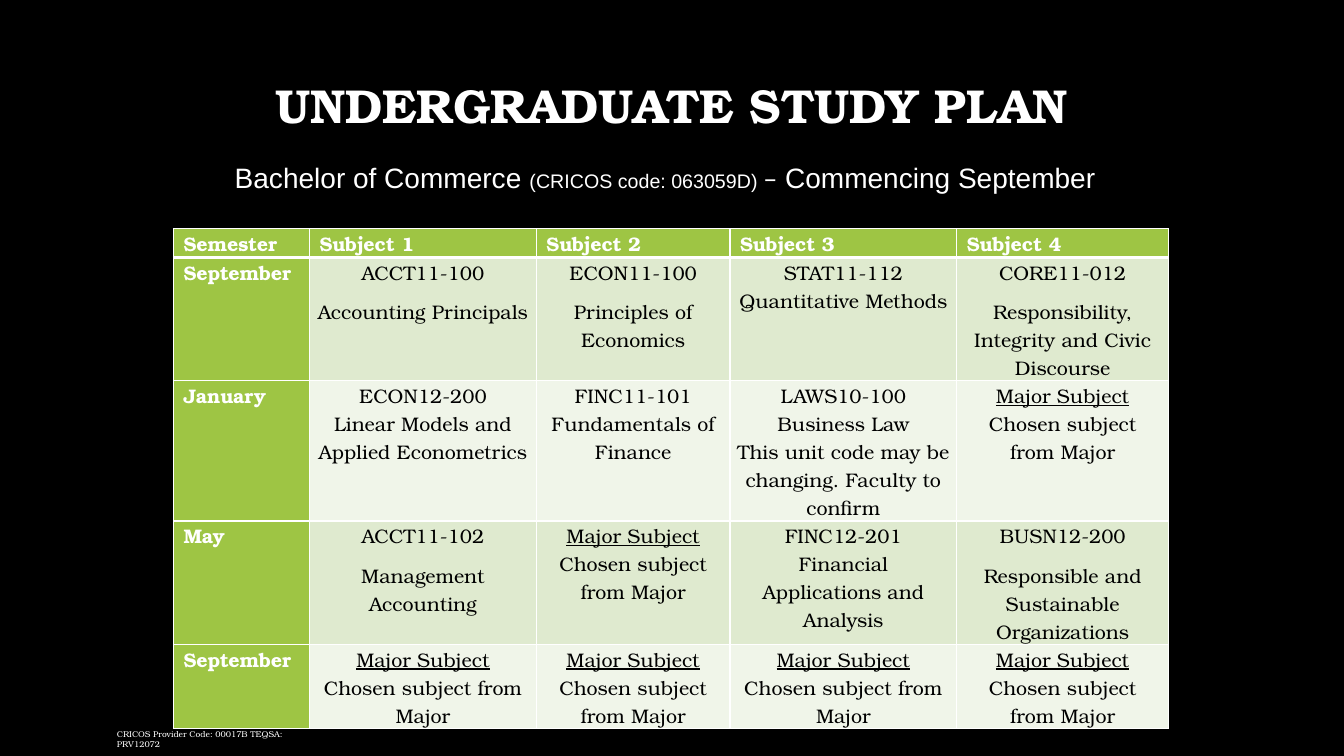
"""Build the undergraduate study plan slide on a grid of 1333 by 750 units."""
from copy import deepcopy

from lxml.etree import SubElement
from pptx import Presentation
from pptx.dml.color import RGBColor
from pptx.enum.text import MSO_ANCHOR, PP_ALIGN
from pptx.oxml.ns import qn
from pptx.util import Inches, Pt

UNIT = Inches(0.01)
HUES = {"back": "000000", "white": "FFFFFF", "ink": "000000",
        "green": "9EC544", "odd": "DFEACF", "even": "F0F5E9"}
SERIF = "TeX Gyre Bonum"
MAJOR = "Major Subject"
CHOICE = MAJOR + "\nChosen subject from Major"
WIDTHS = [135, 225, 192, 225, 210]
HEIGHTS = [24, 119, 127, 119, 76]
PLAN = [
    ["Semester"] + [f"Subject {n}" for n in range(1, 5)],
    ["September", "ACCT11-100|Accounting Principals",
     "ECON11-100|Principles of Economics",
     "STAT11-112\nQuantitative Methods",
     "CORE11-012|Responsibility, Integrity and Civic Discourse"],
    ["January", "ECON12-200\nLinear Models and Applied Econometrics",
     "FINC11-101\nFundamentals of Finance",
     "LAWS10-100\nBusiness Law\nThis unit code may be changing. Faculty to confirm",
     CHOICE],
    ["May", "ACCT11-102|Management Accounting", CHOICE,
     "FINC12-201\nFinancial Applications and Analysis",
     "BUSN12-200|Responsible and Sustainable Organizations"],
    ["September"] + [CHOICE] * 4,
]


def place(shape, left, top, width, height):
    """Set a shape on the grid."""
    spots = {"left": left, "top": top, "width": width, "height": height}
    for name, value in spots.items():
        setattr(shape, name, UNIT * value)


def write(para, text, size, hue="white", face=SERIF, bold=False):
    """Add text to a paragraph, one run per line, and return the last run."""
    for num, line in enumerate(text.split("\n")):
        if num:
            para.add_line_break()
            para._p[-1].append(deepcopy(run._r.rPr))
        run = para.add_run()
        run.text = line
        look = {"size": Pt(size), "name": face, "bold": bold}
        if line == MAJOR:
            look["underline"] = True
        for name, value in look.items():
            setattr(run.font, name, value)
        run.font.color.rgb = RGBColor.from_string(HUES[hue])
    return run


deck = Presentation()
deck.slide_width, deck.slide_height = UNIT * 1333, UNIT * 750
slide = deck.slides.add_slide(deck.slide_layouts[5])
slide.background.fill.solid()
slide.background.fill.fore_color.rgb = RGBColor.from_string(HUES["back"])

title = slide.shapes.title
place(title, 100, 67, 1132, 145)
frame = title.text_frame
frame.vertical_anchor = MSO_ANCHOR.TOP
frame.margin_top = UNIT * 15
para = frame.paragraphs[0]
para.alignment, para.line_spacing = PP_ALIGN.CENTER, 0.9
write(para, "UNDERGRADUATE STUDY PLAN", 34, bold=True)

grid = slide.shapes.add_table(len(HEIGHTS), len(WIDTHS), 0, 0, UNIT, UNIT)
place(grid, 172, 227, sum(WIDTHS), sum(HEIGHTS))
table = grid.table
for col, width in zip(table.columns, WIDTHS):
    col.width = UNIT * width
for row, height in zip(table.rows, HEIGHTS):
    row.height = UNIT * height

for r, items in enumerate(PLAN):
    for c, text in enumerate(items):
        cell = table.cell(r, c)
        head = r == 0 or c == 0
        pads = {"margin_left": 10 if head else 7, "margin_right": 7,
                "margin_top": 0, "margin_bottom": 0}
        for name, value in pads.items():
            setattr(cell, name, UNIT * value)
        for num, part in enumerate(text.split("|")):
            para = cell.text_frame.add_paragraph() if num else cell.text_frame.paragraphs[0]
            if head:
                run = write(para, part, 14, bold=True)
                run._r.rPr.set("spc", "-10")
            else:
                look = {"alignment": PP_ALIGN.CENTER, "line_spacing": 1.07,
                        "space_after": Pt(8)}
                for name, value in look.items():
                    setattr(para, name, value)
                write(para, part, 14, "ink")
        props = cell._tc.get_or_add_tcPr()
        for side in "LRTB":
            thick = (r, side) in [(0, "B"), (1, "T")]
            line = SubElement(props, qn(f"a:ln{side}"), w=str(Pt(3 if thick else 1)))
            fill = SubElement(line, qn("a:solidFill"))
            SubElement(fill, qn("a:srgbClr"), val=HUES["white"])
        cell.fill.solid()
        tone = "green" if head else "odd" if r % 2 else "even"
        cell.fill.fore_color.rgb = RGBColor.from_string(HUES[tone])

degree = slide.shapes.add_textbox(0, 0, UNIT, UNIT)
place(degree, 223, 154, 886, 44)
frame = degree.text_frame
frame.word_wrap, frame.vertical_anchor = True, MSO_ANCHOR.MIDDLE
for text, size, face in [("Bachelor of Commerce ", 20, "Arial"),
                         ("(CRICOS code: 063059D) ", 14, "Arial"),
                         ("–", 20, "Calibri"),
                         (" Commencing September", 20, "Arial")]:
    write(frame.paragraphs[0], text, size, face=face)

code = slide.shapes.add_textbox(0, 0, UNIT, UNIT)
place(code, 116, 723, 209, 10)
frame = code.text_frame
frame.word_wrap = True
for side in ("left", "right", "top", "bottom"):
    setattr(frame, f"margin_{side}", 0)
frame.paragraphs[0].line_spacing = Pt(7.2)
write(frame.paragraphs[0], "CRICOS Provider Code: 00017B TEQSA: PRV12072", 6)

deck.save("out.pptx")
